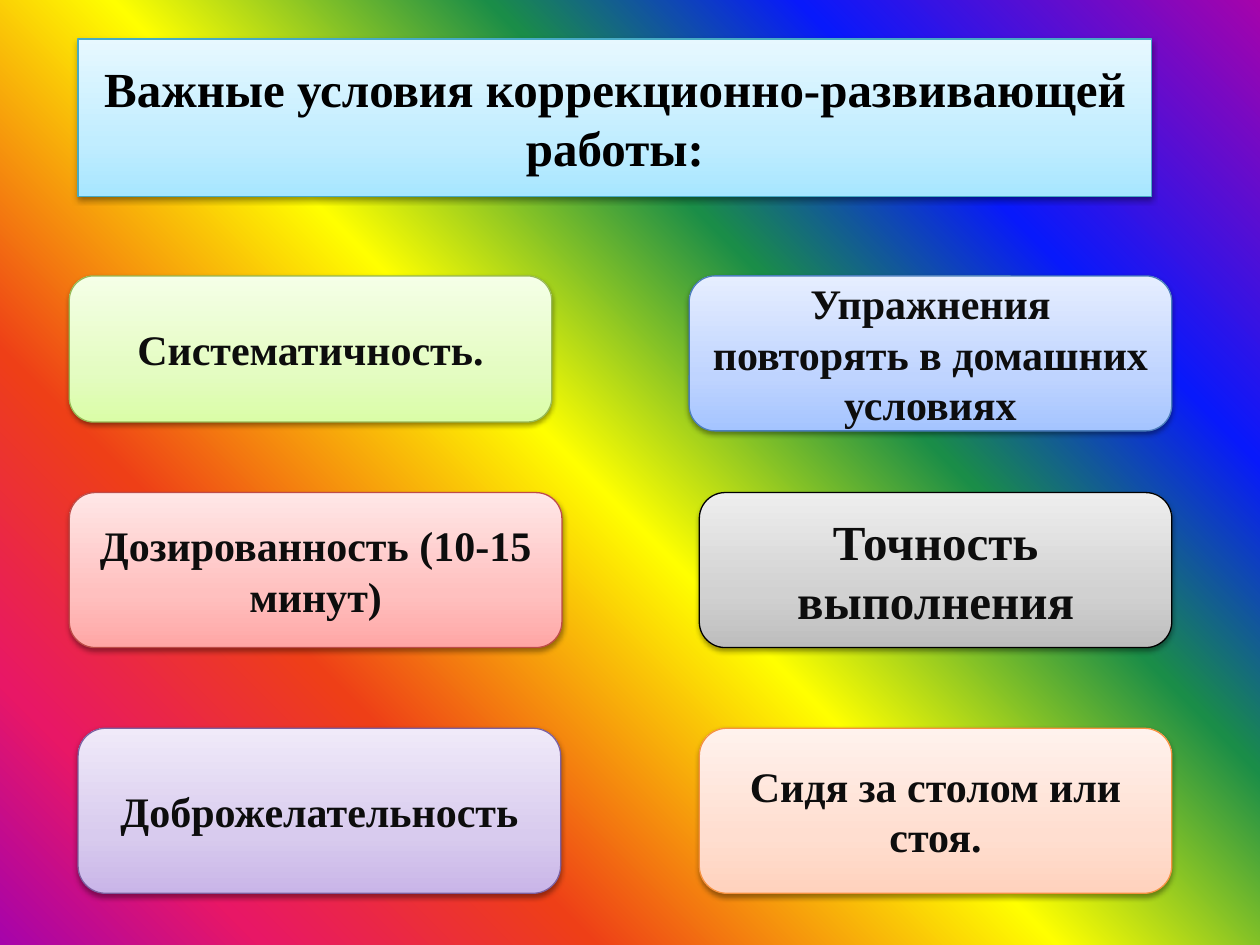
from typing import NamedTuple

from pptx import Presentation
from pptx.dml.color import RGBColor
from pptx.enum.shapes import MSO_SHAPE
from pptx.enum.text import MSO_ANCHOR, MSO_AUTO_SIZE, PP_ALIGN
from pptx.oxml import parse_xml
from pptx.oxml.ns import nsdecls, qn
from pptx.shapes.autoshape import Shape
from pptx.slide import Slide
from pptx.util import Inches, Pt

FONT = "Times New Roman"
RAINBOW = {0: "A603AB", 21: "0819FB", 35: "1A8D48", 52: "FFFF00",
           73: "EE3F17", 88: "E81766", 100: "A603AB"}
CORNER = '<a:path path="circle"><a:fillToRect l="100000" b="100000"/></a:path>'
UPWARD = '<a:lin ang="16200000" scaled="1"/>'
ROUNDED = f'<a:prstGeom {nsdecls("a")} prst="roundRect"><a:avLst/></a:prstGeom>'
SHADOW = (
    f'<a:effectLst {nsdecls("a")}>'
    '<a:outerShdw blurRad="40000" dist="20000" dir="5400000" rotWithShape="0">'
    '<a:srgbClr val="000000"><a:alpha val="38000"/></a:srgbClr>'
    '</a:outerShdw></a:effectLst>'
)


class Card(NamedTuple):
    """Text, place and colours of one rounded card."""
    text: str
    left: float
    top: float
    width: float
    height: float
    shades: tuple[str, str, str]
    outline: str
    size: int = 24
    ink: str = "0D0D0D"


HEADING = Card("Важные условия коррекционно-развивающей работы:", 0.62, 0.31, 8.52, 1.25,
               ("A7E6FF", "C1EDFF", "E7F8FF"), "46AAC5", 28, "000000")
CONDITIONS = [
    Card("Систематичность.", 0.55, 2.19, 3.83, 1.16,
         ("DAFDA7", "E4FCC2", "F5FFE7"), "98B955"),
    Card("Дозированность (10-15 минут)", 0.55, 3.91, 3.91, 1.23,
         ("FFA6A5", "FFC0BF", "FFE7E7"), "BF4C48"),
    Card("Доброжелательность", 0.62, 5.78, 3.83, 1.31,
         ("C9B5E8", "D8CBEE", "F0EAF9"), "7D60A0"),
    Card("Упражнения повторять в домашних условиях", 5.47, 2.19, 3.83, 1.23,
         ("A4C4FF", "BFD4FF", "E6EEFF"), "4B7EBC"),
    Card("Точность выполнения", 5.55, 3.91, 3.75, 1.23,
         ("BDBDBD", "D1D1D1", "EEEEEE"), "000000", 28),
    Card("Сидя за столом или стоя.", 5.55, 5.78, 3.75, 1.31,
         ("FFD2BD", "FFDED0", "FFF2ED"), "F69240"),
]


def color(value: str) -> RGBColor:
    """Turn a hex string into a colour."""
    return RGBColor.from_string(value)


def gradient(stops: dict[int, str], direction: str):
    """Build a gradient fill from stops in percent."""
    marks = "".join(f'<a:gs pos="{position * 1000}"><a:srgbClr val="{value}"/></a:gs>'
                    for position, value in stops.items())
    return parse_xml(f'<a:gradFill {nsdecls("a")} rotWithShape="1">'
                     f'<a:gsLst>{marks}</a:gsLst>{direction}</a:gradFill>')


def paint_background(slide: Slide) -> None:
    """Fill the slide with the rainbow."""
    slide.background.fill.solid()
    properties = slide.element.find(".//" + qn("p:bgPr"))
    properties.replace(properties[0], gradient(RAINBOW, CORNER))


def format_card(shape: Shape, card: Card) -> None:
    """Give a shape the fill, outline, shadow and text of a card."""
    properties = shape.element.spPr
    properties.append(gradient(dict(zip((0, 35, 100), card.shades)), UPWARD))
    shape.line.color.rgb = color(card.outline)
    shape.line.width = Pt(0.75)
    properties.append(parse_xml(SHADOW))
    frame = shape.text_frame
    frame.text = card.text
    frame.word_wrap = True
    frame.auto_size = MSO_AUTO_SIZE.NONE
    frame.vertical_anchor = MSO_ANCHOR.MIDDLE
    paragraph = frame.paragraphs[0]
    paragraph.alignment = PP_ALIGN.CENTER
    font = paragraph.font
    font.name, font.size, font.bold = FONT, Pt(card.size), True
    font.color.rgb = color(card.ink)


def add_heading(slide: Slide, card: Card) -> None:
    """Turn the title placeholder into a rounded card."""
    title = slide.shapes.title
    title.left, title.top = Inches(card.left), Inches(card.top)
    title.width, title.height = Inches(card.width), Inches(card.height)
    title.element.spPr.append(parse_xml(ROUNDED))
    format_card(title, card)


def add_card(slide: Slide, card: Card) -> None:
    """Add one rounded card."""
    box = map(Inches, (card.left, card.top, card.width, card.height))
    format_card(slide.shapes.add_shape(MSO_SHAPE.ROUNDED_RECTANGLE, *box), card)


def main() -> None:
    """Build and save the slide."""
    presentation = Presentation()
    presentation.slide_width, presentation.slide_height = Inches(10), Inches(7.5)
    slide = presentation.slides.add_slide(presentation.slide_layouts[5])
    paint_background(slide)
    add_heading(slide, HEADING)
    for card in CONDITIONS:
        add_card(slide, card)
    presentation.save("out.pptx")


if __name__ == "__main__":
    main()
